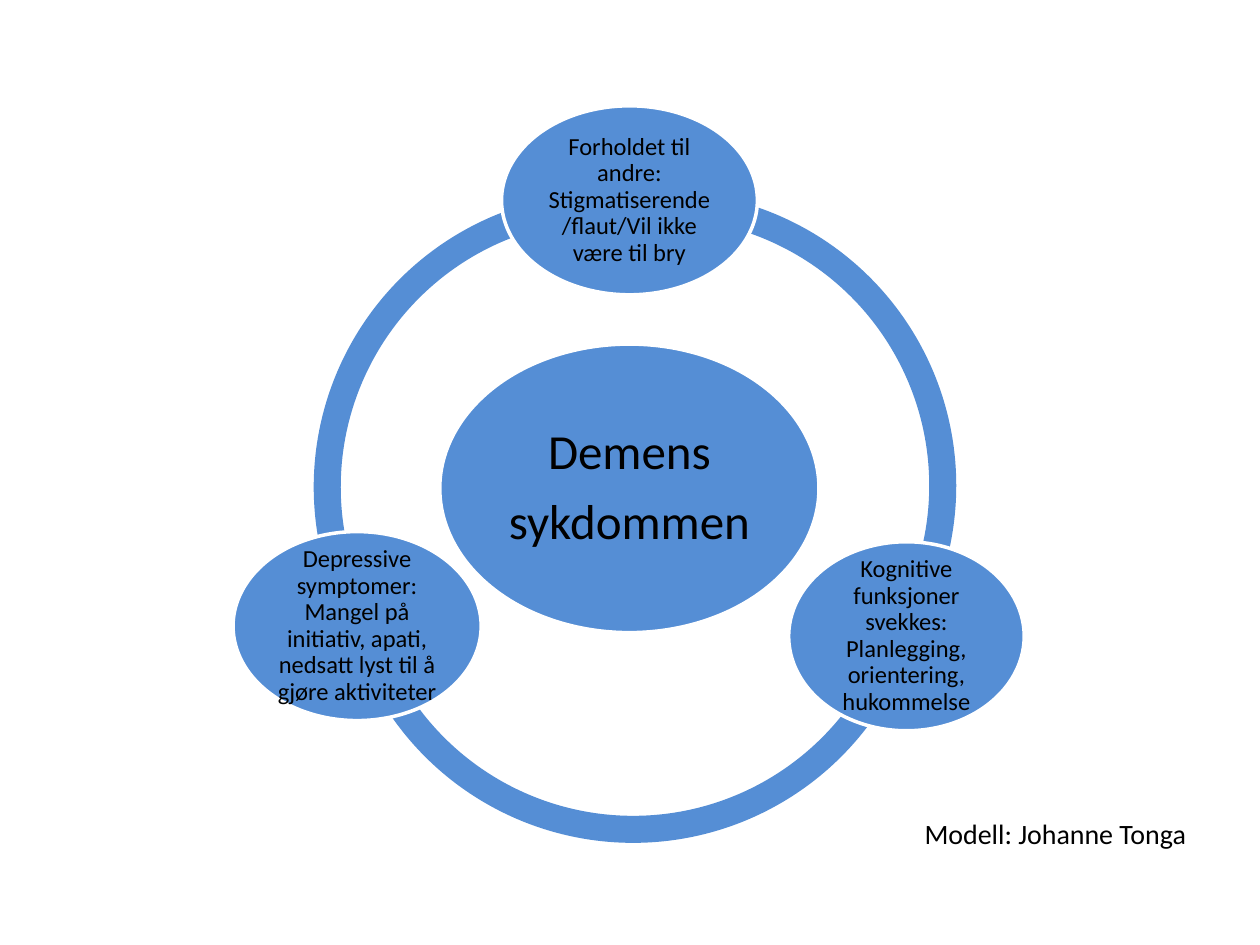
from pptx import Presentation
from pptx.dml.color import RGBColor
from pptx.enum.shapes import MSO_SHAPE
from pptx.enum.text import MSO_ANCHOR, MSO_AUTO_SIZE, PP_ALIGN
from pptx.util import Pt

BLUE = RGBColor(0x55, 0x8E, 0xD5)
WHITE = RGBColor(0xFF, 0xFF, 0xFF)
BLACK = RGBColor(0x00, 0x00, 0x00)
ARC_SIZE = 336.3
ARC_THICKNESS = 0.05
SATELLITE_HEIGHT = 108

ARCS = [
    ((179.3, 110.2), (90.5, 164.5)),
    ((193.7, 145.4), (10.78, 98.46)),
    ((210.2, 109.4), (157.98, 19.05)),
]
SATELLITES = [
    ((286.6, 60.5, 146.2), "Forholdet til andre: Stigmatiserende /flaut/Vil ikke være til bry"),
    ((450.7, 309.6, 134.6), "Kognitive funksjoner svekkes: Planlegging, orientering, hukommelse"),
    ((133.2, 303.8, 141.8), "Depressive symptomer: Mangel på initiativ, apati, nedsatt lyst til å gjøre aktiviteter"),
]


def set_all(target, values):
    for name, value in values.items():
        setattr(target, name, value)


def write(frame, lines, size, paragraph_format):
    for index, line in enumerate(lines):
        paragraph = frame.paragraphs[0] if index == 0 else frame.add_paragraph()
        paragraph.text = line
        set_all(paragraph, paragraph_format)
        set_all(paragraph.font, {"name": "Calibri", "size": Pt(size)})
        paragraph.font.color.rgb = BLACK


def add_blue(slide, preset, box):
    figure = slide.shapes.add_shape(preset, *map(Pt, box))
    figure.shadow.inherit = False
    figure.fill.solid()
    figure.fill.fore_color.rgb = BLUE
    return figure


def add_arc(slide, box, angles):
    arc = add_blue(slide, MSO_SHAPE.BLOCK_ARC, box)
    arc.line.fill.background()
    for index, value in enumerate((*angles, ARC_THICKNESS - 0.004)):
        arc.adjustments[index] = value


def add_bubble(slide, box, lines, size):
    bubble = add_blue(slide, MSO_SHAPE.OVAL, box)
    bubble.line.color.rgb = WHITE
    bubble.line.width = Pt(2)
    inset = Pt(size / 10)
    set_all(bubble.text_frame, {
        "word_wrap": True,
        "vertical_anchor": MSO_ANCHOR.MIDDLE,
        "margin_left": inset,
        "margin_right": inset,
        "margin_top": inset,
        "margin_bottom": inset,
    })
    write(bubble.text_frame, lines, size, {
        "alignment": PP_ALIGN.CENTER,
        "line_spacing": 0.9,
        "space_after": Pt(size * 0.35),
    })


def add_credit(slide, box):
    credit = slide.shapes.add_textbox(*map(Pt, box))
    set_all(credit.text_frame, {"word_wrap": True, "auto_size": MSO_AUTO_SIZE.SHAPE_TO_FIT_TEXT})
    write(credit.text_frame, ["Modell: Johanne Tonga"], 16, {"alignment": PP_ALIGN.LEFT})


def main():
    deck = Presentation()
    set_all(deck, {"slide_width": Pt(720), "slide_height": Pt(540)})
    slide = deck.slides.add_slide(deck.slide_layouts[6])
    for corner, angles in ARCS:
        add_arc(slide, (*corner, ARC_SIZE, ARC_SIZE), angles)
    add_bubble(slide, (251.3, 196.6, 216.7, 164.9), ["Demens", "sykdommen"], 28)
    for place, wording in SATELLITES:
        add_bubble(slide, (*place, SATELLITE_HEIGHT), [wording], 14)
    add_credit(slide, (521.3, 463, 172.8, 26.6))
    deck.save("out.pptx")


if __name__ == "__main__":
    main()
